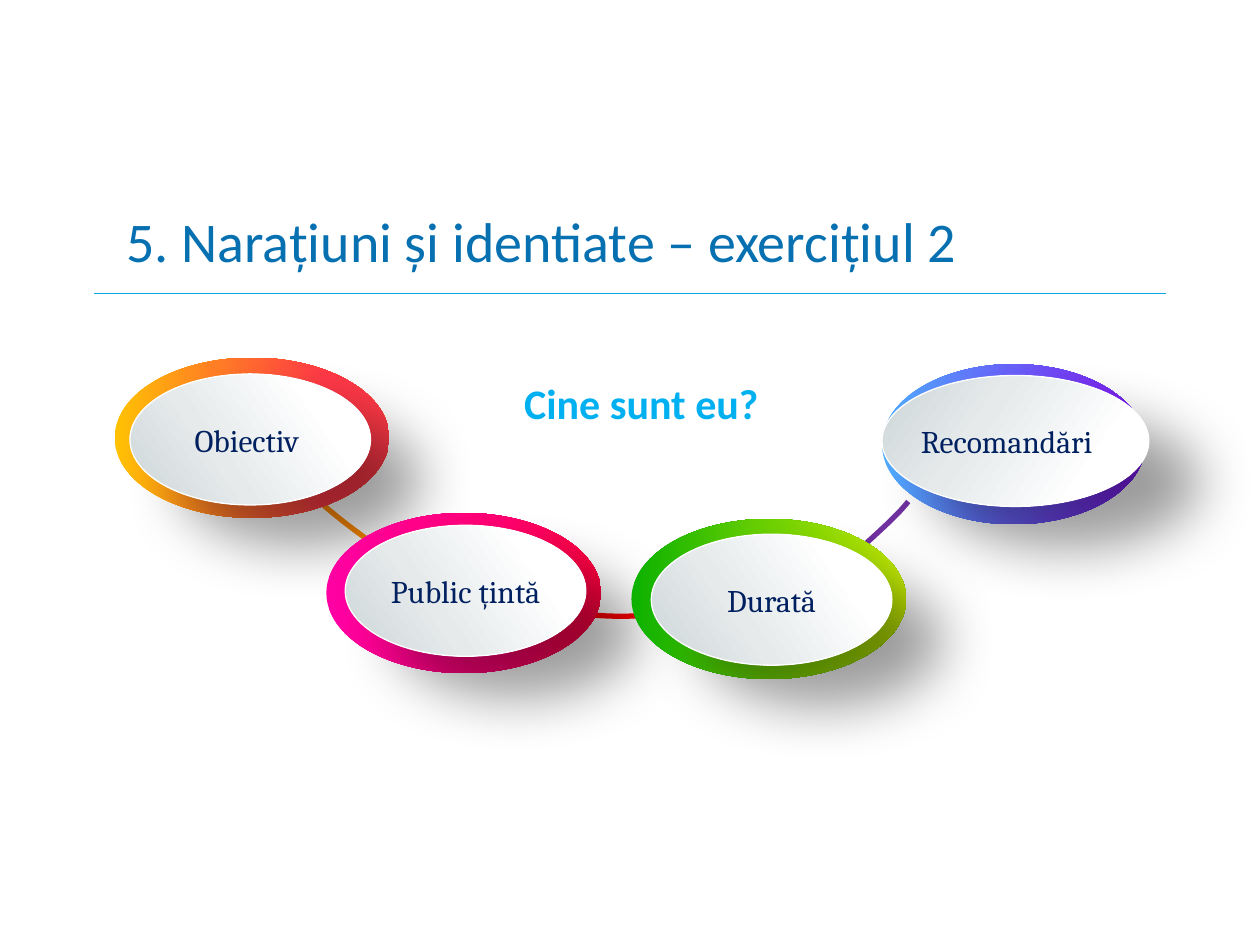
import pptx
import pptx.dml.color
import pptx.enum.shapes
import pptx.enum.text
import pptx.oxml
import pptx.oxml.ns
import pptx.util
from dataclasses import dataclass

Cm = pptx.util.Cm
Pt = pptx.util.Pt
RGB = pptx.dml.color.RGBColor.from_string
qn = pptx.oxml.ns.qn
OVAL = pptx.enum.shapes.MSO_SHAPE.OVAL
ALIGN = pptx.enum.text.PP_ALIGN
MIDDLE = pptx.enum.text.MSO_ANCHOR.MIDDLE


@dataclass
class Theme:
    title: str = "0770B1"
    rule: str = "0BA7DF"
    question: str = "00B0F0"
    label: str = "002060"
    white: str = "FFFFFF"
    orange: str = "FF8A00"
    red: str = "FF0000"
    purple: str = "7030A0"
    face: tuple = ((0, "CDD5D8"), (37, "E6EAEB"), (77, "FFFFFF"), (100, "FFFFFF"))
    title_size: int = 32
    question_size: int = 24
    label_size: int = 18
    sans: str = "Calibri"
    serif: str = "Cambria"


theme = Theme()


def add_text(paragraph, text, font_name, size, color, bold=False):
    run = paragraph.add_run()
    run.text = text
    run.font.name = font_name
    run.font.size = Pt(size)
    run.font.bold = bold
    run.font.color.rgb = RGB(color)


def add_gradient_oval(slide, box, stops, angle):
    shape = slide.shapes.add_shape(OVAL, *[Cm(value) for value in box])
    shape.shadow.inherit = False
    shape.line.fill.background()
    shape.fill.gradient()
    shape.fill.gradient_angle = angle
    stop_list = shape._element.spPr.find(".//" + qn("a:gsLst"))
    for stop in list(stop_list):
        stop_list.remove(stop)
    for position, color in stops:
        stop_list.append(pptx.oxml.parse_xml(
            f'<a:gs {pptx.oxml.ns.nsdecls("a")} pos="{position * 1000}">'
            f'<a:srgbClr val="{color}"/></a:gs>'))
    return shape


presentation = pptx.Presentation()
presentation.slide_width = Cm(25.4)
presentation.slide_height = Cm(19.05)
slide = presentation.slides.add_slide(presentation.slide_layouts[5])

# Title and the rule below it
rule = slide.shapes.add_connector(
    pptx.enum.shapes.MSO_CONNECTOR.STRAIGHT, Cm(1.9), Cm(5.92), Cm(23.5), Cm(5.92))
rule.line.color.rgb = RGB(theme.rule)
rule.line.width = Pt(0.75)
rule._element.spPr.append(
    pptx.oxml.parse_xml(f'<a:effectLst {pptx.oxml.ns.nsdecls("a")}/>'))

title = slide.shapes.title
title.left, title.top, title.width, title.height = Cm(2.29), Cm(3.89), Cm(21.59), Cm(1.91)
title.text_frame.auto_size = pptx.enum.text.MSO_AUTO_SIZE.NONE
title.text_frame.vertical_anchor = MIDDLE
paragraph = title.text_frame.paragraphs[0]
paragraph.alignment = ALIGN.LEFT
add_text(paragraph, "5. Narațiuni și identiate – exercițiul 2",
         theme.sans, theme.title_size, theme.title)

# Curved links: a start point, then three Bézier points per segment
links = [
    (theme.purple, [(18.31, 10.11), (18.21, 10.24), (18.11, 10.34), (18.01, 10.44),
                    (17.68, 10.77), (17.32, 11.07), (16.99, 11.38),
                    (16.51, 11.68), (16.03, 11.94), (15.52, 12.12)]),
    (theme.red, [(11.4, 12.34), (11.96, 12.42), (12.52, 12.45), (13.08, 12.4),
                 (13.36, 12.37), (13.64, 12.34), (13.92, 12.32)]),
    (theme.orange, [(6.27, 9.96), (6.81, 10.46), (7.47, 10.95), (8.18, 11.38)]),
]
STEPS = 10
for color, points in links:
    builder = slide.shapes.build_freeform(Cm(points[0][0]), Cm(points[0][1]))
    vertices = []
    for first in range(0, len(points) - 1, 3):
        for step in range(1, STEPS + 1):
            t = step / STEPS
            weights = ((1 - t) ** 3, 3 * t * (1 - t) ** 2, 3 * t ** 2 * (1 - t), t ** 3)
            vertices.append(tuple(
                Cm(sum(weight * point[axis]
                       for weight, point in zip(weights, points[first:first + 4])))
                for axis in (0, 1)))
    builder.add_line_segments(vertices, close=False)
    link = builder.convert_to_shape()
    link.shadow.inherit = False
    link.fill.background()
    link.line.color.rgb = RGB(color)
    link.line.width = Pt(3)

# Ovals: label, ring box, ring colours from left to right, face box, face angle, alignment
ovals = [
    ("Recomandări", (17.78, 7.34, 5.31, 3.23),
     ((0, "4FACFE"), (48, "6761F7"), (100, "8016EF")),
     (17.78, 7.57, 5.38, 2.64), 325, ALIGN.LEFT),
    ("Obiectiv ", (2.31, 7.21, 5.54, 3.23),
     ((0, "FFC203"), (37, "FF7D25"), (77, "FF3847"), (100, "FF3847")),
     (2.62, 7.54, 4.85, 2.64), 35, ALIGN.CENTER),
    ("Public țintă", (6.58, 10.34, 5.54, 3.23),
     ((0, "FF00A2"), (1, "FF00A2"), (63, "FF0071"), (98, "FF0040"), (100, "FF0040")),
     (6.96, 10.59, 4.85, 2.64), 35, ALIGN.CENTER),
    ("Durată", (12.73, 10.46, 5.54, 3.23),
     ((0, "0CB100"), (47, "67CE02"), (99, "C3EA03")),
     (13.13, 10.77, 4.85, 2.64), 35, ALIGN.CENTER),
]
for label, ring_box, ring_stops, face_box, face_angle, alignment in ovals:
    add_gradient_oval(slide, ring_box, ring_stops, 0)
    face = add_gradient_oval(slide, face_box, theme.face, face_angle)
    face.line.color.rgb = RGB(theme.white)
    face.line.width = Pt(0.75)
    face._element.spPr.find(qn("a:effectLst")).append(pptx.oxml.parse_xml(
        f'<a:outerShdw {pptx.oxml.ns.nsdecls("a")} blurRad="{Pt(33)}" dist="{Pt(36.7)}" '
        f'dir="{39 * 60000}" algn="tl" rotWithShape="0">'
        '<a:srgbClr val="000000"><a:alpha val="38000"/></a:srgbClr></a:outerShdw>'))
    frame = face.text_frame
    frame.word_wrap = True
    frame.vertical_anchor = MIDDLE
    frame.margin_left = frame.margin_right = frame.margin_top = frame.margin_bottom = 0
    paragraph = frame.paragraphs[0]
    paragraph.alignment = alignment
    add_text(paragraph, label, theme.serif, theme.label_size, theme.label)

# Central question
question = slide.shapes.add_textbox(Cm(8.08), Cm(7.34), Cm(9.7), Cm(1.37))
question.text_frame.word_wrap = True
paragraph = question.text_frame.paragraphs[0]
paragraph.alignment = ALIGN.CENTER
paragraph.line_spacing = 1.15
paragraph.space_after = Pt(6)
add_text(paragraph, "Cine sunt eu?", theme.sans, theme.question_size, theme.question, bold=True)

presentation.save("out.pptx")
